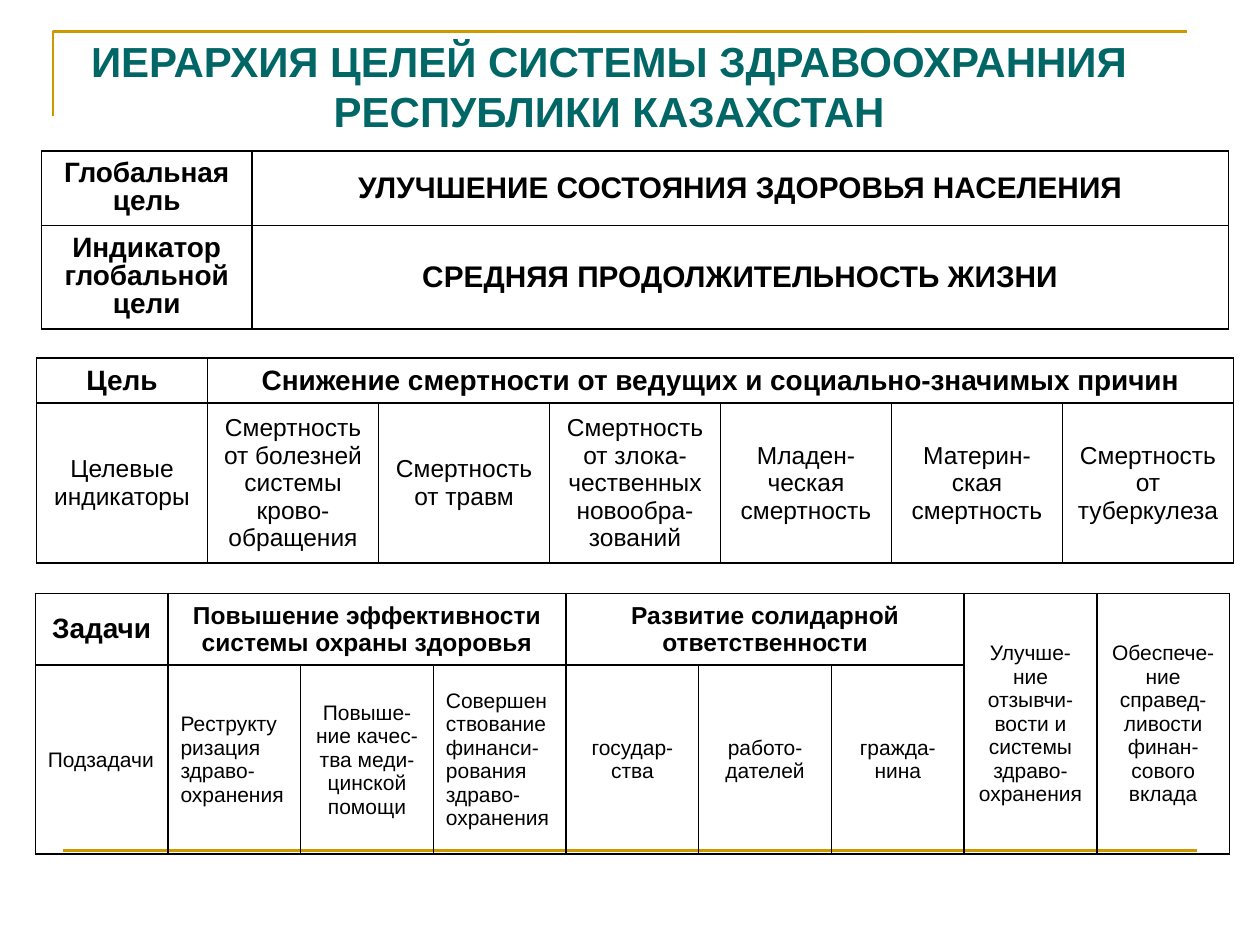
from dataclasses import dataclass

from lxml import etree
from pptx import Presentation
from pptx import util as u
from pptx.dml.color import RGBColor
from pptx.enum import shapes, text
from pptx.oxml.ns import qn

Inches, Pt = u.Inches, u.Pt
LEFT, CENTER = text.PP_ALIGN.LEFT, text.PP_ALIGN.CENTER


@dataclass(frozen=True)
class Theme:
    font: str = "Arial"
    title: str = "006666"
    ink: str = "000000"
    rule: str = "CC9900"
    title_size: int = 24
    goal_size: int = 17
    head_size: int = 16
    body_size: int = 14
    small_size: int = 12
    rule_width: float = 1.5
    border_width: int = 1


T = Theme()
HEAD = dict(size=T.head_size, bold=True)
LABEL = dict(HEAD, spacing=0.9)
GOAL = dict(size=T.goal_size, bold=True)
GROUP = dict(size=T.body_size, bold=True)
BODY = dict(size=T.body_size)
SMALL = dict(size=T.small_size)
SMALL_LEFT = dict(SMALL, align=LEFT)


def write(tf, words, size, bold=False, align=CENTER, spacing=None, color=T.ink):
    tf.word_wrap = True
    p = tf.paragraphs[0]
    p.alignment = align
    if spacing:
        p.line_spacing = spacing
    r = p.add_run()
    r.text = words
    for name, value in dict(name=T.font, size=Pt(size), bold=bold).items():
        setattr(r.font, name, value)
    r.font.color.rgb = RGBColor.from_string(color)


def style_rule(line):
    line.color.rgb = RGBColor.from_string(T.rule)
    line.width = Pt(T.rule_width)


def add_frame(s, x, y, w, h, bottom):
    """Corner rule at the top left and a straight rule at the bottom."""
    fb = s.shapes.build_freeform(Inches(x), Inches(y + h))
    fb.add_line_segments([(Inches(x), Inches(y)), (Inches(x + w), Inches(y))], close=False)
    corner = fb.convert_to_shape()
    corner.shadow.inherit = False
    corner.fill.background()
    style_rule(corner.line)

    left = x + 0.08
    rule = s.shapes.add_connector(shapes.MSO_CONNECTOR.STRAIGHT, Inches(left),
                                  Inches(bottom), Inches(left + w), Inches(bottom))
    style_rule(rule.line)
    etree.SubElement(rule._element.spPr, qn("a:effectLst"))


def add_title(s, words, x, y, w, h):
    sp = s.shapes.title
    sp.left, sp.top, sp.width, sp.height = map(Inches, (x, y, w, h))
    tf = sp.text_frame
    tf.auto_size = text.MSO_AUTO_SIZE.NONE
    tf.vertical_anchor = text.MSO_ANCHOR.MIDDLE
    write(tf, words, T.title_size, bold=True, color=T.title)


def style_cell(cell):
    tcPr = cell._tc.get_or_add_tcPr()
    for side in ("lnL", "lnR", "lnT", "lnB"):
        ln = etree.SubElement(tcPr, qn(f"a:{side}"), w=str(Pt(T.border_width)))
        fill = etree.SubElement(ln, qn("a:solidFill"))
        etree.SubElement(fill, qn("a:srgbClr"), val=T.ink)
    cell.fill.background()
    cell.vertical_anchor = text.MSO_ANCHOR.MIDDLE


def add_grid(s, x, y, cols, rows, cells):
    """Cells are (row, column, words, format[, (row span, column span)])."""
    frame = s.shapes.add_table(len(rows), len(cols), Inches(x), Inches(y),
                               Inches(sum(cols)), Inches(sum(rows)))
    table = frame.table
    table.first_row = table.horz_banding = False
    for parts, name, lengths in ((table.columns, "width", cols), (table.rows, "height", rows)):
        for part, length in zip(parts, lengths):
            setattr(part, name, Inches(length))
    for cell in table.iter_cells():
        style_cell(cell)
    for row, col, words, fmt, *span in cells:
        cell = table.cell(row, col)
        if span:
            down, across = span[0]
            cell.merge(table.cell(row + down - 1, col + across - 1))
        write(cell.text_frame, words, **fmt)


def add_global_goal(s, x, y, w):
    label = 1.67
    add_grid(s, x, y, [label, w - label], [0.59, 0.82], [
        (0, 0, "Глобальная цель", LABEL),
        (0, 1, "УЛУЧШЕНИЕ СОСТОЯНИЯ ЗДОРОВЬЯ НАСЕЛЕНИЯ", GOAL),
        (1, 0, "Индикатор глобальной цели", LABEL),
        (1, 1, "СРЕДНЯЯ ПРОДОЛЖИТЕЛЬНОСТЬ ЖИЗНИ", GOAL),
    ])


def add_targets(s, x, y, w):
    indicators = [
        "Целевые индикаторы",
        "Смертность от болезней системы крово-обращения",
        "Смертность от травм",
        "Смертность от злока-чественных новообра-зований",
        "Младен-ческая смертность",
        "Материн-ская смертность",
        "Смертность от туберкулеза",
    ]
    n = len(indicators)
    add_grid(s, x, y, [w / n] * n, [0.36, 1.27], [
        (0, 0, "Цель", HEAD),
        (0, 1, "Снижение смертности от ведущих и социально-значимых причин", HEAD, (1, n - 1)),
        *((1, i, words, BODY) for i, words in enumerate(indicators)),
    ])


def add_tasks(s, x, y, w):
    subtasks = [
        ("Подзадачи", SMALL_LEFT),
        ("Реструктуризация здраво-охранения", SMALL_LEFT),
        ("Повыше-ние качес-тва меди-цинской помощи", SMALL),
        ("Совершенствование финанси-рования здраво-охранения", SMALL_LEFT),
        ("государ-ства", SMALL),
        ("работо-дателей", SMALL),
        ("гражда-нина", SMALL),
    ]
    n = len(subtasks) + 2
    add_grid(s, x, y, [w / n] * n, [0.57, 1.5], [
        (0, 0, "Задачи", HEAD),
        (0, 1, "Повышение эффективности системы охраны здоровья", GROUP, (1, 3)),
        (0, 4, "Развитие солидарной ответственности", GROUP, (1, 3)),
        (0, 7, "Улучше-ние отзывчи-вости и системы здраво-охранения", SMALL, (2, 1)),
        (0, 8, "Обеспече-ние справед-ливости финан-сового вклада", SMALL, (2, 1)),
        *((1, i, words, fmt) for i, (words, fmt) in enumerate(subtasks)),
    ])


def main():
    prs = Presentation()
    prs.slide_width, prs.slide_height = Inches(10), Inches(7.5)
    s = prs.slides.add_slide(prs.slide_layouts[5])
    add_frame(s, 0.42, 0.25, 9, 0.67, bottom=6.75)
    add_title(s, "ИЕРАРХИЯ ЦЕЛЕЙ СИСТЕМЫ ЗДРАВООХРАННИЯ РЕСПУБЛИКИ КАЗАХСТАН",
              0.33, 0.21, 9.01, 0.94)
    add_global_goal(s, 0.33, 1.2, 9.42)
    add_targets(s, 0.29, 2.84, 9.5)
    add_tasks(s, 0.28, 4.71, 9.48)
    prs.save("out.pptx")


if __name__ == "__main__":
    main()
